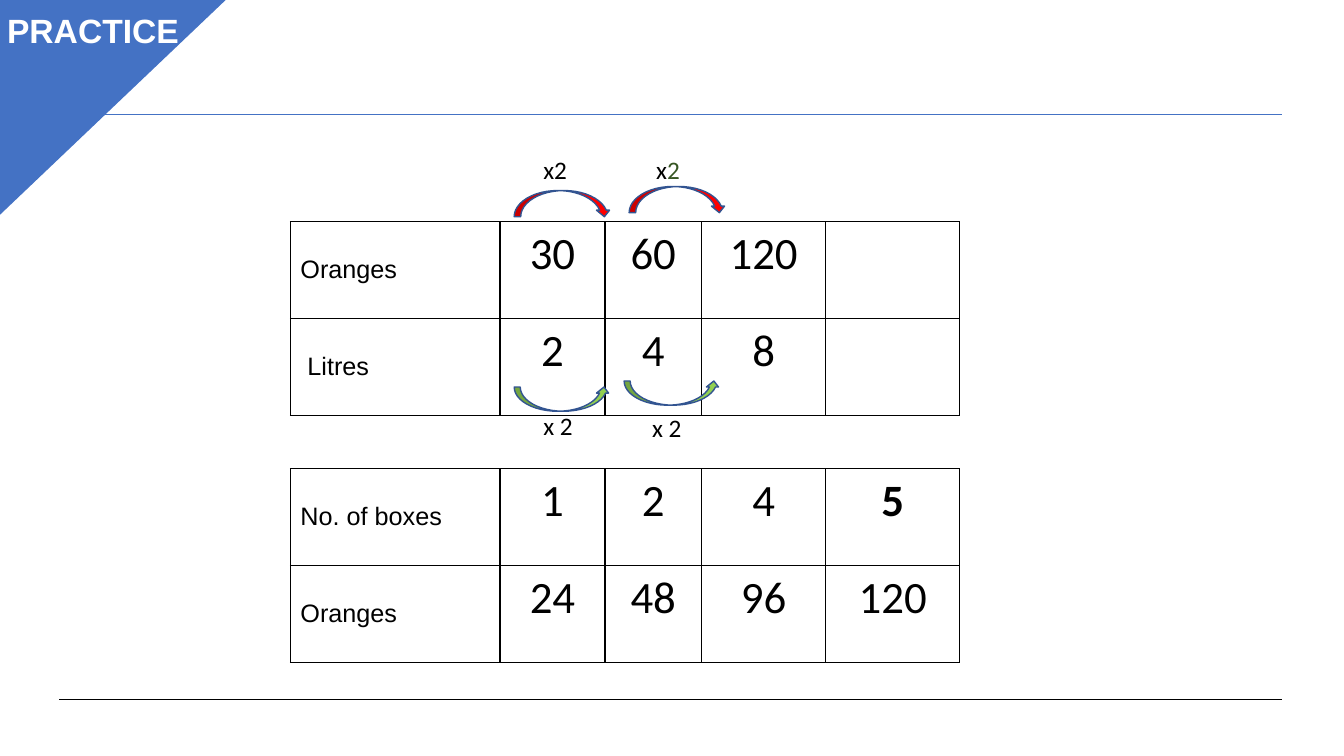
"""Build a practice slide with two ratio tables and doubling arrows."""
from lxml import etree
from pptx import Presentation, util as u
from pptx.dml.color import RGBColor
from pptx.enum import shapes, text
from pptx.oxml import ns

COLORS = {"black": "000000", "white": "FFFFFF", "blue": "4472C4", "outline": "325491",
          "red": "FF0000", "green": "92D050", "dark green": "375623"}
TITLE = "PRACTICE"
RULES = [(6.94, "black"), (1.14, "blue")]
TABLES = [
    (2.2, [["Oranges", "30", "60", "120", ""], [" Litres", "2", "4", "8", ""]]),
    (4.65, [["No. of boxes", "1", "2", "4", "5"], ["Oranges", "24", "48", "96", "120"]]),
]
BOLD_CELLS = {"5"}
TABLE_LEFT, ROW_HEIGHT = 2.88, 0.96
COLUMNS = [2.08, 1.04, 0.96, 1.23, 1.33]
ARROWS = [
    ("CURVED_LEFT_ARROW", (5.45, 1.54, 0.26, 0.96), 270, "red"),
    ("CURVED_LEFT_ARROW", (6.59, 1.5, 0.26, 0.96), 270, "red"),
    ("CURVED_UP_ARROW", (5.1, 3.84, 0.95, 0.24), 0, "green"),
    ("CURVED_UP_ARROW", (6.19, 3.78, 0.95, 0.24), 0, "green"),
]
FACTORS = [
    ((5.29, 1.48, 0.58, 0.4), [("x2", "black")]),
    ((6.41, 1.48, 0.62, 0.4), [("x", "black"), ("2", "dark green")]),
    ((5.29, 4.02, 0.7, 0.4), [("x 2", "black")]),
    ((6.37, 4.04, 0.7, 0.4), [("x 2", "black")]),
]


def rgb(name):
    return RGBColor.from_string(COLORS[name])


def inches(values):
    return [u.Inches(value) for value in values]


def write(para, words, color="black", **formats):
    span = para.add_run()
    span.text = words
    span.font.color.rgb = rgb(color)
    for name, value in formats.items():
        setattr(span.font, name, value)


def add_rule(page, top, color):
    rule = page.shapes.add_connector(
        shapes.MSO_CONNECTOR.STRAIGHT, *inches((0.59, top, 12.72, top)))
    rule.line.color.rgb = rgb(color)
    rule.line.width = u.Pt(0.75)
    etree.SubElement(rule._element.spPr, ns.qn("a:effectLst"))


def add_figure(page, kind, place, fill, line):
    figure = page.shapes.add_shape(getattr(shapes.MSO_SHAPE, kind), *inches(place))
    figure.shadow.inherit = False
    figure.fill.solid()
    figure.fill.fore_color.rgb = rgb(fill)
    figure.line.color.rgb = rgb(line)
    figure.line.width = u.Pt(1)
    return figure


def format_cell(cell):
    properties = cell._tc.get_or_add_tcPr()
    for side in ("lnL", "lnR", "lnT", "lnB"):
        border = etree.SubElement(properties, ns.qn(f"a:{side}"), w=str(u.Pt(1)))
        fill = etree.SubElement(border, ns.qn("a:solidFill"))
        etree.SubElement(fill, ns.qn("a:srgbClr"), val=COLORS["black"])
    cell.fill.solid()
    cell.fill.fore_color.rgb = rgb("white")


def add_ratio_table(page, top, rows):
    place = (TABLE_LEFT, top, sum(COLUMNS), ROW_HEIGHT * len(rows))
    table = page.shapes.add_table(len(rows), len(COLUMNS), *inches(place)).table
    table.first_row = table.horz_banding = False
    for column, width in zip(table.columns, COLUMNS):
        column.width = u.Inches(width)
    for r, row in enumerate(rows):
        table.rows[r].height = u.Inches(ROW_HEIGHT)
        for c, words in enumerate(row):
            cell = table.cell(r, c)
            format_cell(cell)
            para = cell.text_frame.paragraphs[0]
            if c == 0:
                cell.vertical_anchor = text.MSO_ANCHOR.MIDDLE
                write(para, words, name="Arial", size=u.Pt(18))
            elif words:
                para.alignment = text.PP_ALIGN.CENTER
                write(para, words, name="Calibri", size=u.Pt(32), bold=words in BOLD_CELLS)


def add_factor(page, place, parts):
    box = page.shapes.add_textbox(*inches(place))
    box.text_frame.word_wrap = True
    for words, color in parts:
        write(box.text_frame.paragraphs[0], words, color, name="Calibri", size=u.Pt(18))


def place_title(page):
    title = page.shapes.title
    for name, value in zip(("left", "top", "width", "height"), inches((-0.03, 0.05, 1.96, 0.5))):
        setattr(title, name, value)
    frame = title.text_frame
    formats = {"word_wrap": True, "auto_size": text.MSO_AUTO_SIZE.NONE,
               "vertical_anchor": text.MSO_ANCHOR.TOP}
    for name, value in formats.items():
        setattr(frame, name, value)
    frame.paragraphs[0].alignment = text.PP_ALIGN.LEFT
    write(frame.paragraphs[0], TITLE, "white", name="Arial", size=u.Pt(24), bold=True)
    page.shapes._spTree.append(title._element)


def main():
    deck = Presentation()
    deck.slide_width, deck.slide_height = inches((13.33, 7.5))
    page = deck.slides.add_slide(deck.slide_layouts[5])
    for top, color in RULES:
        add_rule(page, top, color)
    corner = add_figure(page, "ISOSCELES_TRIANGLE", (-0.03, -0.02, 2.28, 2.17), "blue", "blue")
    corner.adjustments[0] = 0
    corner._element.spPr.xfrm.set("flipV", "1")
    for top, rows in TABLES:
        add_ratio_table(page, top, rows)
    for kind, place, rotation, color in ARROWS:
        add_figure(page, kind, place, color, "outline").rotation = rotation
    for place, parts in FACTORS:
        add_factor(page, place, parts)
    place_title(page)
    deck.save("out.pptx")


if __name__ == "__main__":
    main()
